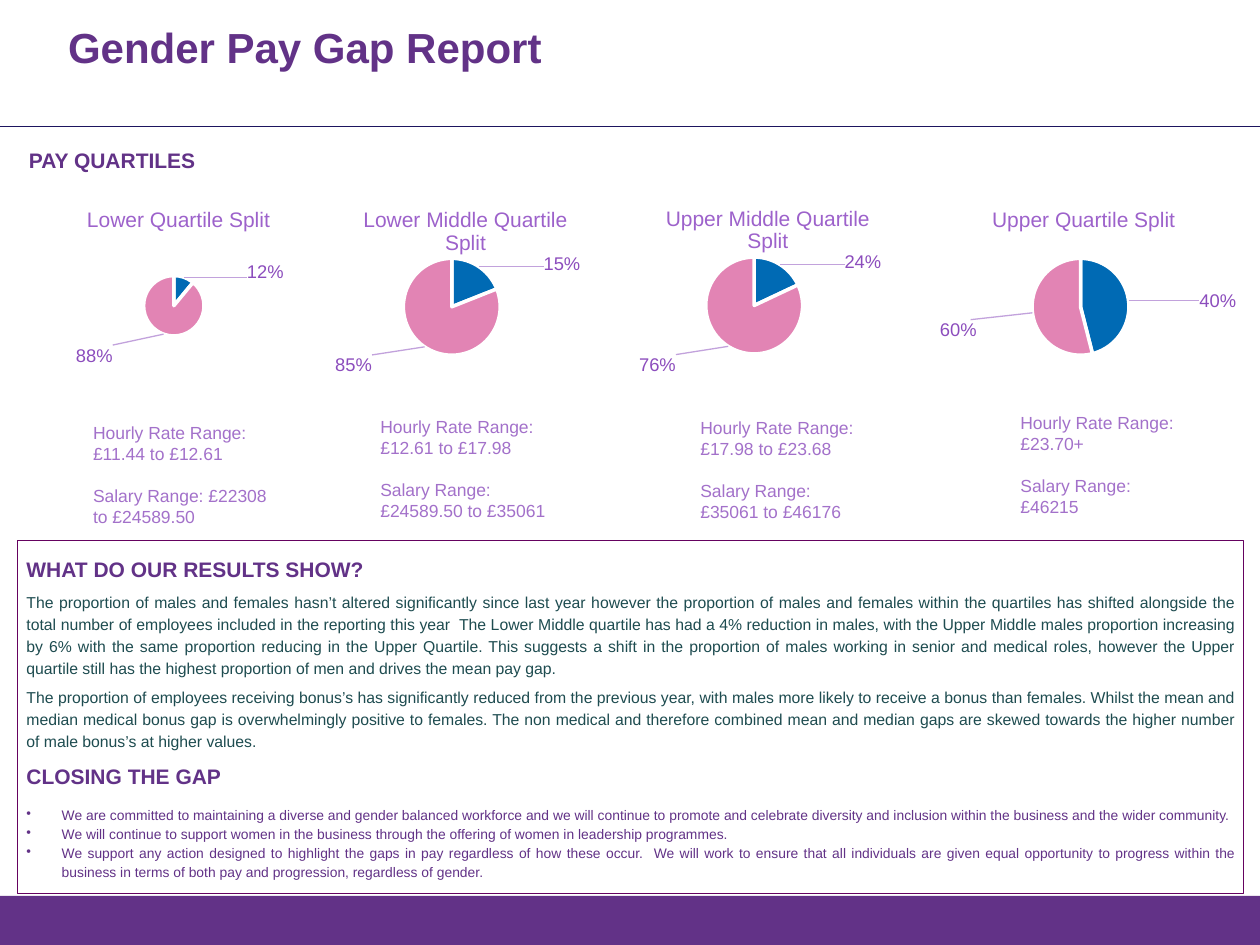
from lxml import etree
from pptx import Presentation
from pptx.chart.data import CategoryChartData
from pptx.dml.color import RGBColor
from pptx.enum.chart import XL_CHART_TYPE, XL_LABEL_POSITION
from pptx.enum.shapes import MSO_CONNECTOR, MSO_SHAPE
from pptx.enum.text import MSO_ANCHOR, PP_ALIGN
from pptx.oxml.ns import qn
from pptx.util import Inches, Pt

PIE = XL_CHART_TYPE.PIE
OUTSIDE = XL_LABEL_POSITION.OUTSIDE_END
STRAIGHT = MSO_CONNECTOR.STRAIGHT
RECTANGLE = MSO_SHAPE.RECTANGLE
TOP, MIDDLE = MSO_ANCHOR.TOP, MSO_ANCHOR.MIDDLE
LEFT, JUSTIFY = PP_ALIGN.LEFT, PP_ALIGN.JUSTIFY

COLOURS = {
    "purple": "623287", "rule": "1D155F", "border": "650260",
    "body": "1E4C50", "range": "A371CA", "chart_title": "9D62CB",
    "label": "8C4DBD", "leader": "C2A2DC",
    "male": "006AB4", "female": "E284B4", "white": "FFFFFF",
}
INSETS = (0.07, 0.04, 0.07, 0.04)
PLOT = (0, 0.37, 0.93, 0.49)

QUARTILES = [
    dict(title="Lower Quartile Split", left=0.18, top=1.47, title_at=(0.2, 0.09),
         plot=(0.4, 0.45, 0.2, 0.32), values=(0.11, 0.89), labels=("12%", "88%"),
         shifts=((0.2, 0.06), (-0.16, 0.02)), box=(0.64, 3.3, 1.59),
         ranges=("Hourly Rate Range: £11.44 to £12.61", "Salary Range: £22308 to £24589.50")),
    dict(title="Lower Middle Quartile Split", left=2.47, top=1.47, title_at=(0.16, 0.09),
         plot=PLOT, values=(0.19, 0.81), labels=("15%", "85%"),
         shifts=((0.2, 0.07), (-0.16, 0.01)), box=(2.92, 3.25, 1.59),
         ranges=("Hourly Rate Range: £12.61 to £17.98", "Salary Range: £24589.50 to £35061")),
    dict(title="Upper Middle Quartile Split", left=4.87, top=1.46, title_at=(0.16, 0.09),
         plot=PLOT, values=(0.18, 0.82), labels=("24%", "76%"),
         shifts=((0.2, 0.07), (-0.16, 0.01)), box=(5.46, 3.26, 1.49),
         ranges=("Hourly Rate Range: £17.98 to £23.68", "Salary Range: £35061 to £46176")),
    dict(title="Upper Quartile Split", left=7.46, top=1.47, title_at=(0.16, 0.09),
         plot=PLOT, values=(0.46, 0.54), labels=("40%", "60%"),
         shifts=((0.21, 0.06), (-0.18, 0.03)), box=(8, 3.22, 1.49),
         ranges=("Hourly Rate Range: £23.70+", "Salary Range: £46215")),
]

HEADING = dict(size=12, bold=True, align=JUSTIFY, spacing=1.15, after=4.5)
BODY = dict(size=9, colour="body", align=JUSTIFY, spacing=1.15, after=4.5)
BULLET = dict(size=7.9, align=JUSTIFY, spacing=1.15, bullet=True)
RESULTS = [
    ("WHAT DO OUR RESULTS SHOW?", HEADING),
    ("The proportion of males and females hasn’t altered significantly since last year however the "
     "proportion of males and females within the quartiles has shifted alongside the total number of "
     "employees included in the reporting this year  The Lower Middle quartile has had a 4% reduction "
     "in males, with the Upper Middle males proportion increasing by 6% with the same proportion "
     "reducing in the Upper Quartile. This suggests a shift in the proportion of males working in "
     "senior and medical roles, however the Upper quartile still has the highest proportion of men "
     "and drives the mean pay gap.", BODY),
    ("The proportion of employees receiving bonus’s has significantly reduced from the previous year, "
     "with males more likely to receive a bonus than females. Whilst the mean and median medical bonus "
     "gap is overwhelmingly positive to females. The non medical and therefore combined mean and median "
     "gaps are skewed towards the higher number of male bonus’s at higher values.", BODY),
    ("CLOSING THE GAP", {**HEADING, "spacing": 1.2, "after": 9}),
    ("We are committed to maintaining a diverse and gender balanced workforce and we will continue to "
     "promote and celebrate diversity and inclusion within the business and the wider community.", BULLET),
    ("We will continue to support women in the business through the offering of women in leadership "
     "programmes.", BULLET),
    ("We support any action designed to highlight the gaps in pay regardless of how these occur.  We "
     "will work to ensure that all individuals are given equal opportunity to progress within the "
     "business in terms of both pay and progression, regardless of gender.", BULLET),
]


class SlideBuilder:
    """Draws styled elements on one slide."""

    def __init__(self, slide):
        self.slide = slide
        self.font = "Arial"

    def colour(self, name):
        return RGBColor.from_string(COLOURS[name])

    def style(self, font, size, colour, bold=False):
        font.name, font.size, font.bold = self.font, Pt(size), bold
        font.color.rgb = self.colour(colour)

    def fill_text(self, frame, paragraphs, insets=INSETS, anchor=MIDDLE):
        frame.word_wrap, frame.vertical_anchor = True, anchor
        (frame.margin_left, frame.margin_top,
         frame.margin_right, frame.margin_bottom) = map(Inches, insets)
        for index, (text, look) in enumerate(paragraphs):
            para = frame.add_paragraph() if index else frame.paragraphs[0]
            para.text = text
            para.alignment = look.get("align", LEFT)
            para.line_spacing = look.get("spacing", 1)
            para.space_before = Pt(look.get("before", 0))
            para.space_after = Pt(look.get("after", 0))
            if look.get("bullet"):
                properties = para._p.get_or_add_pPr()
                properties.set("marL", str(Inches(0.28)))
                properties.set("indent", str(-Inches(0.28)))
                etree.SubElement(properties, qn("a:buChar"), char="•")
            self.style(para.font, look["size"], look.get("colour", "purple"), look.get("bold", False))

    def text(self, at, paragraphs, **options):
        box = self.slide.shapes.add_textbox(*map(Inches, at))
        self.fill_text(box.text_frame, paragraphs, **options)

    def rectangle(self, at, fill=None, line=None):
        shape = self.slide.shapes.add_shape(RECTANGLE, *map(Inches, at))
        shape.shadow.inherit = False
        if fill:
            shape.fill.solid()
            shape.fill.fore_color.rgb = self.colour(fill)
        else:
            shape.fill.background()
        if line:
            shape.line.color.rgb, shape.line.width = self.colour(line), Pt(0.75)
        else:
            shape.line.fill.background()
        return shape

    def rule(self, start, end):
        line = self.slide.shapes.add_connector(STRAIGHT, *map(Inches, start + end))
        line.line.color.rgb, line.line.width = self.colour("rule"), Pt(0.25)
        etree.SubElement(line._element.spPr, qn("a:effectLst"))

    def layout(self, parent, follows, position, edges=False, inner=False):
        for old in parent.findall(qn("c:layout")):
            parent.remove(old)
        layout = etree.Element(qn("c:layout"))
        manual = etree.SubElement(layout, qn("c:manualLayout"))
        if inner:
            etree.SubElement(manual, qn("c:layoutTarget"), val="inner")
        if edges:
            for name in ("xMode", "yMode"):
                etree.SubElement(manual, qn("c:" + name), val="edge")
        for name, value in zip("xywh", position):
            etree.SubElement(manual, qn("c:" + name), val=str(value))
        if follows is None:
            parent.insert(0, layout)
        else:
            parent.find(qn(follows)).addnext(layout)

    def pie(self, quartile):
        data = CategoryChartData(number_format="0.0%")
        data.categories = ["1", "2"]
        data.add_series("Series 1", quartile["values"])
        at = map(Inches, (quartile["left"], quartile["top"], 2.4, 1.57))
        chart = self.slide.shapes.add_chart(PIE, *at, data).chart
        self.style(chart.font, 10, "purple")
        chart.has_legend = False
        title = chart.chart_title
        title.text_frame.text = quartile["title"]
        self.style(title.text_frame.paragraphs[0].font, 12, "chart_title")
        self.layout(title._element, "c:tx", quartile["title_at"], edges=True)
        plot = chart.plots[0]
        plot.vary_by_categories = True
        self.layout(chart._chartSpace.chart.plotArea, None, quartile["plot"], edges=True, inner=True)
        series = plot.series[0]
        labels = series.data_labels
        labels.show_value, labels.position = True, OUTSIDE
        labels.number_format, labels.number_format_is_linked = "0.0%", False
        self.style(labels.font, 10.5, "label")
        for index, fill in enumerate(("male", "female")):
            point = series.points[index]
            point.format.fill.solid()
            point.format.fill.fore_color.rgb = self.colour(fill)
            point.format.line.color.rgb, point.format.line.width = self.colour("white"), Pt(2)
            label = point.data_label
            label.text_frame.text = quartile["labels"][index]
            self.style(label.text_frame.paragraphs[0].runs[0].font, 10.5, "label")
            label.position = OUTSIDE
            self.layout(labels._element.findall(qn("c:dLbl"))[index], "c:idx", quartile["shifts"][index])
        for old in labels._element.findall(qn("c:showLeaderLines")):
            labels._element.remove(old)
        etree.SubElement(labels._element, qn("c:showLeaderLines"), val="1")
        leader = etree.SubElement(labels._element, qn("c:leaderLines"))
        stroke = etree.SubElement(etree.SubElement(leader, qn("c:spPr")), qn("a:ln"), w=str(Pt(0.75)))
        fill = etree.SubElement(stroke, qn("a:solidFill"))
        etree.SubElement(fill, qn("a:srgbClr"), val=COLOURS["leader"])


def main():
    deck = Presentation()
    deck.slide_width, deck.slide_height = Inches(10), Inches(7.5)
    page = SlideBuilder(deck.slides.add_slide(deck.slide_layouts[6]))
    page.rectangle((0, 7.11, 10, 0.39), fill="purple")
    page.rule((0, 1), (10, 1))
    page.text((0.54, 0.22, 3.93, 0.34), [("Gender Pay Gap Report", dict(size=24, bold=True, spacing=0.9))],
              insets=(0, 0, 0, 0), anchor=TOP)
    page.text((0.16, 1.13, 2.9, 0.28), [("PAY QUARTILES", dict(size=12, bold=True))])
    results = page.rectangle((0.14, 4.29, 9.73, 2.8), line="border")
    page.fill_text(results.text_frame, RESULTS)
    for quartile in QUARTILES:
        hourly, salary = quartile["ranges"]
        look = dict(size=10, colour="range")
        page.text((*quartile["box"], 0.94), [(hourly, look), (salary, {**look, "before": 12})],
                  insets=(0.1, 0.05, 0.1, 0.05), anchor=TOP)
        page.pie(quartile)
    deck.save("out.pptx")


if __name__ == "__main__":
    main()
